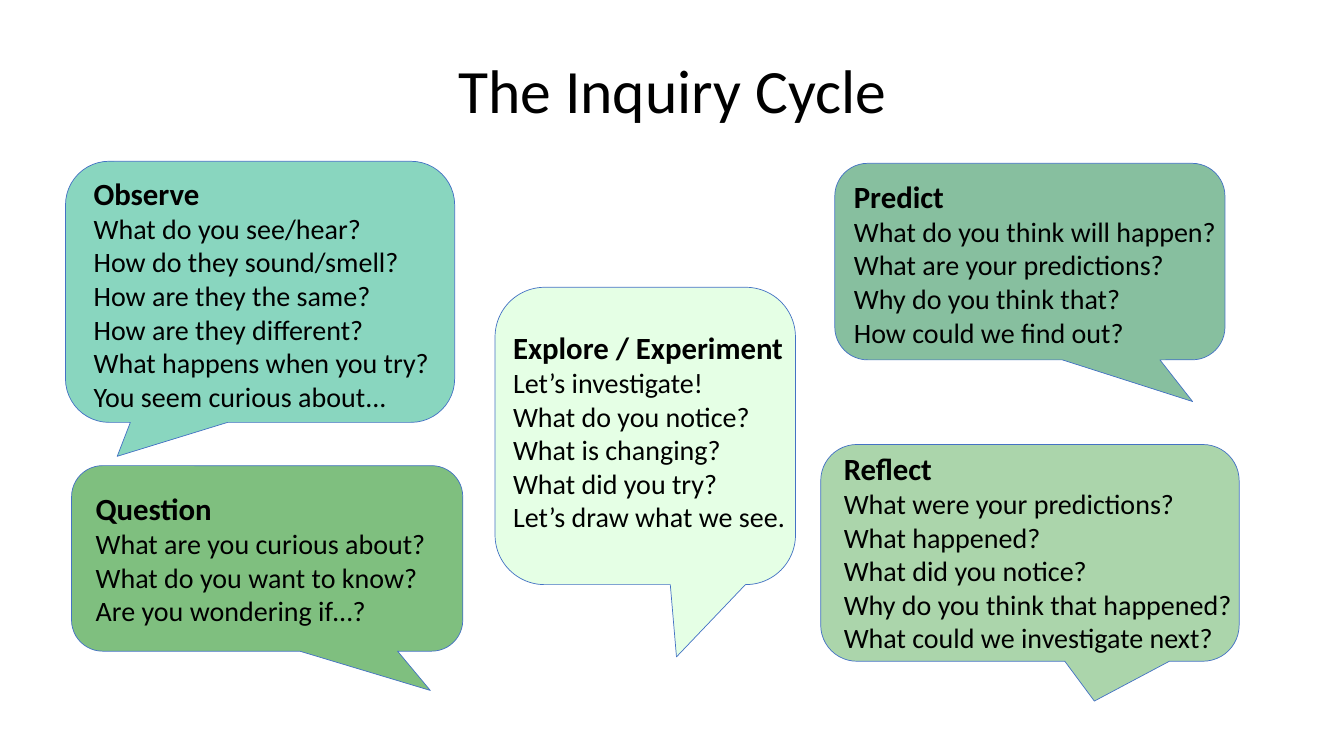
"""Build the Inquiry Cycle slide: five speech callouts with question prompts."""
from lxml import etree
from pptx import Presentation
from pptx import util as u
from pptx.dml.color import RGBColor
from pptx.enum import shapes, text
from pptx.oxml.ns import qn

COLORS = {
    "text": "000000",
    "outline": "4472C4",
    "teal": "15AF80",
    "green": "008000",
    "forest": "108040",
    "mint": "CCFFCC",
}
HEADING = {"name": "Calibri", "size": u.Pt(22), "bold": True}
PROMPT = {"name": "Calibri", "size": u.Pt(20), "bold": False}
TITLE = {"name": "Calibri", "size": u.Pt(44), "bold": False}

CALLOUTS = [
    ("teal", 50, (0.65, 1.6, 3.86, 2.59), (-0.367, 0.63), (0.83, 1.68, 5.32, 2.56),
     ["Observe", "What do you see/hear?", "How do they sound/smell?",
      "How are they the same?", "How are they different?",
      "What happens when you try?", "You seem curious about..."]),
    ("green", 50, (0.71, 4.62, 3.88, 1.84), (0.417, 0.712), (0.85, 4.81, 3.88, 1.51),
     ["Question", "What are you curious about?", "What do you want to know?",
      "Are you wondering if…?"]),
    ("forest", 50, (8.28, 1.62, 3.87, 1.95), (0.417, 0.712), (8.37, 1.71, 4.95, 1.87),
     ["Predict", "What do you think will happen?", "What are your predictions?",
      "Why do you think that?", "How could we find out?"]),
    ("mint", 50, (4.91, 2.85, 2.98, 2.95), (0.104, 0.743), (4.99, 3.21, 5.32, 2.15),
     ["Explore / Experiment", "Let’s investigate!", "What do you notice?",
      "What is changing?", "What did you try?", "Let’s draw what we see."]),
    ("green", 33, (8.14, 4.41, 4.15, 2.15), (0.154, 0.684), (8.27, 4.41, 5.05, 2.15),
     ["Reflect", "What were your predictions?", "What happened?",
      "What did you notice?", "Why do you think that happened?",
      "What could we investigate next?"]),
]


def add_text(slide, box, lines, first_format):
    """Add a text box whose first line has its own format."""
    shape = slide.shapes.add_textbox(*map(u.Inches, box))
    frame = shape.text_frame
    frame.word_wrap = True
    frame.text = "\n".join(lines)
    for index, paragraph in enumerate(frame.paragraphs):
        font = paragraph.runs[0].font
        for name, value in (PROMPT if index else first_format).items():
            setattr(font, name, value)
        font.color.rgb = RGBColor.from_string(COLORS["text"])
    return frame


presentation = Presentation()
presentation.slide_width = u.Inches(13.33)
presentation.slide_height = u.Inches(7.5)
slide = presentation.slides.add_slide(presentation.slide_layouts[6])

title = add_text(slide, (0.92, 0.4, 11.5, 1.05), ["The Inquiry Cycle"], TITLE)
title.vertical_anchor = text.MSO_ANCHOR.MIDDLE
title.paragraphs[0].alignment = text.PP_ALIGN.CENTER
title.paragraphs[0].line_spacing = 0.9

for color, opacity, bubble, tail, text_box, lines in CALLOUTS:
    shape = slide.shapes.add_shape(
        shapes.MSO_SHAPE.ROUNDED_RECTANGULAR_CALLOUT, *map(u.Inches, bubble))
    shape.shadow.inherit = False
    for index, value in enumerate((*tail, 0.167)):
        shape.adjustments[index] = value
    shape.fill.solid()
    shape.fill.fore_color.rgb = RGBColor.from_string(COLORS[color])
    fill_color = shape.fill._xPr.find(qn("a:solidFill"))[0]
    etree.SubElement(fill_color, qn("a:alpha"), val=str(opacity * 1000))
    shape.line.color.rgb = RGBColor.from_string(COLORS["outline"])
    shape.line.width = u.Pt(0.5)
    add_text(slide, text_box, lines, HEADING)

presentation.save("out.pptx")
